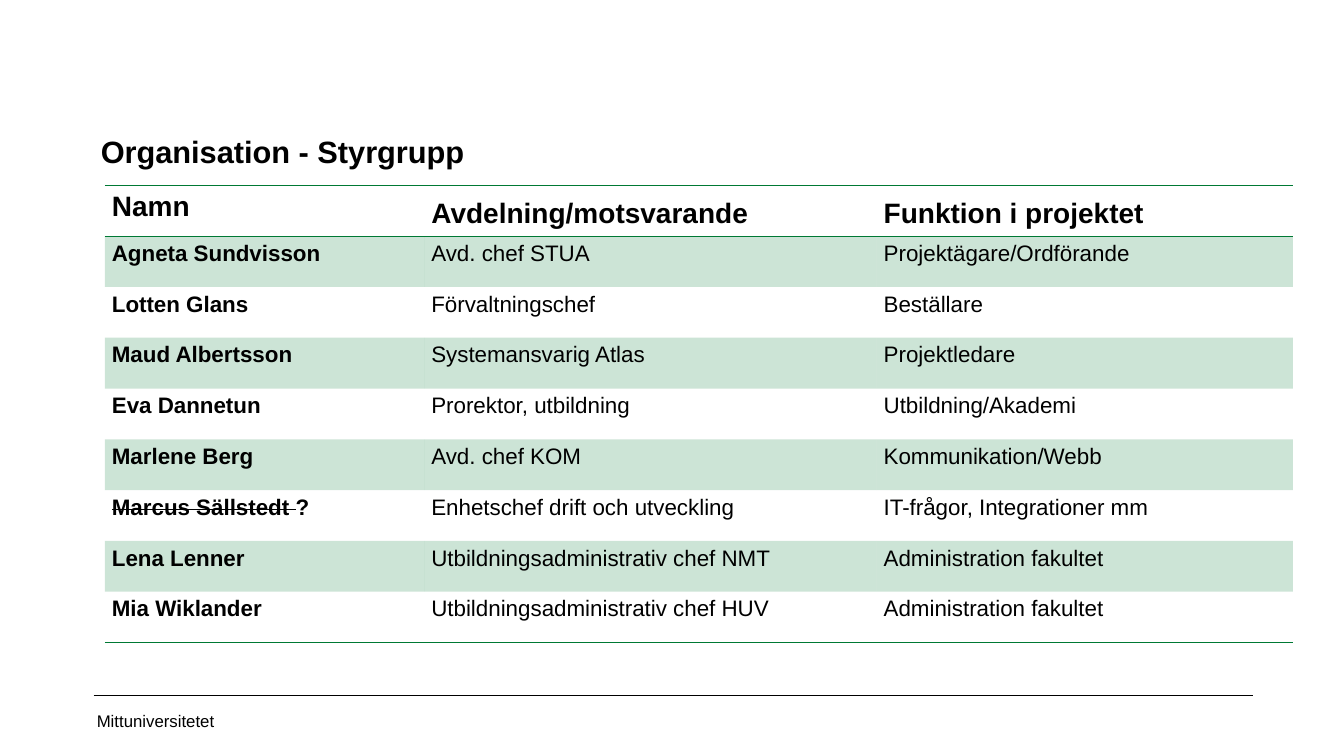
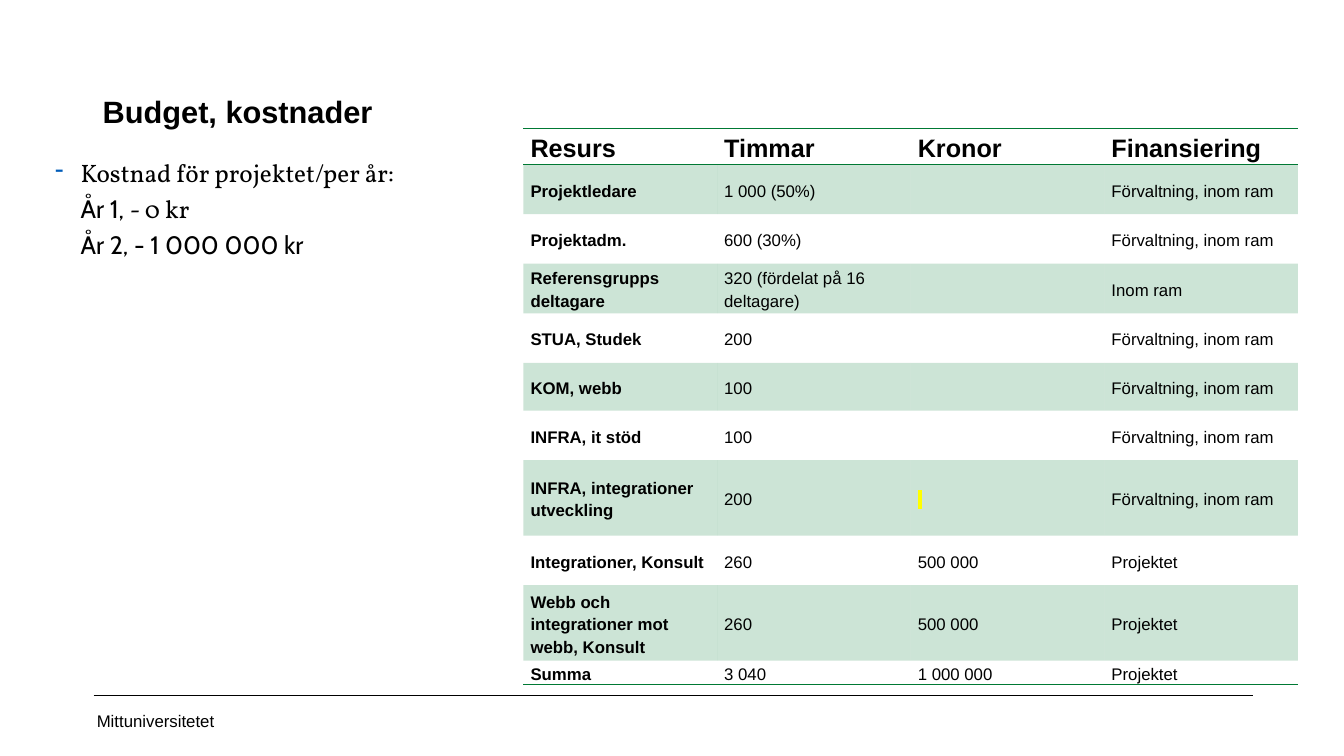
from lxml.etree import SubElement as Sub
from pptx import Presentation
from pptx.dml.color import RGBColor as Rgb
from pptx.enum.shapes import MSO_CONNECTOR as Link
from pptx.enum.text import MSO_ANCHOR as Anchor
from pptx.oxml.ns import qn
from pptx.util import Cm, Pt

INK = {"text": "000000", "green": "007934", "dash": "005CB9", "mark": "FFFF00"}
PLAIN = "{2D5ABB26-0587-4C30-8999-92F81FD0307C}"
TITLE = {"size": Pt(22), "bold": True, "name": "Arial"}
FOOT = {"size": Pt(12), "name": "Arial"}
FRAME = {"word_wrap": True, "vertical_anchor": Anchor.TOP}
MARGIN = {"margin_left": Cm(0.18), "margin_right": Cm(0.18),
          "margin_top": 0, "margin_bottom": 0}

STAFF = [
    ("Namn", "Avdelning/motsvarande", "Funktion i projektet"),
    ("Agneta Sundvisson", "Avd. chef STUA", "Projektägare/Ordförande"),
    ("Lotten Glans", "Förvaltningschef", "Beställare"),
    ("Maud Albertsson", "Systemansvarig Atlas", "Projektledare"),
    ("Eva Dannetun", "Prorektor, utbildning", "Utbildning/Akademi"),
    ("Marlene Berg", "Avd. chef KOM", "Kommunikation/Webb"),
    ("Marcus Sällstedt ", "Enhetschef drift och utveckling", "IT-frågor, Integrationer mm"),
    ("Lena Lenner", "Utbildningsadministrativ chef NMT", "Administration fakultet"),
    ("Mia Wiklander", "Utbildningsadministrativ chef HUV", "Administration fakultet"),
]
WITHIN = "Förvaltning, inom ram"
COSTS = [
    ("Resurs", "Timmar", "Kronor", "Finansiering"),
    ("Projektledare", "1 000 (50%)", "", WITHIN),
    ("Projektadm.", "600 (30%)", "", WITHIN),
    ("Referensgrupps deltagare", "320 (fördelat på 16 deltagare)", "", "Inom ram"),
    ("STUA, Studek", "200", "", WITHIN),
    ("KOM, webb", "100", "", WITHIN),
    ("INFRA, it stöd", "100", "", WITHIN),
    ("INFRA, integrationer utveckling", "200", " ", WITHIN),
    ("Integrationer, Konsult", "260", "500 000", "Projektet"),
    ("Webb och integrationer mot webb, Konsult", "260", "500 000", "Projektet"),
    ("Summa", "3 040", "1 000 000", "Projektet"),
]
YEARS = [
    [("Kostnad för projektet/per år:", "Vollkorn")],
    [("År 1, ", "Cabin"), ("- 0 kr", "Vollkorn")],
    [("År 2, - 1 000 000 kr", "Cabin")],
]


def apply(item, style):
    """Set each attribute named in a style."""
    for key, value in style.items():
        setattr(item, key, value)


def write(para, text, style):
    """Add a run in the text colour."""
    run = para.add_run()
    run.text = text
    apply(run.font, style)
    run.font.color.rgb = Rgb.from_string(INK["text"])
    return run


def mark(run):
    """Highlight a run."""
    fill = run._r.get_or_add_rPr().find(qn("a:solidFill"))
    light = Sub(fill.getparent(), qn("a:highlight"))
    Sub(light, qn("a:srgbClr"), val=INK["mark"])
    fill.addnext(light)


def frame(slide, box, **style):
    """Add a wrapped text box and return its text frame."""
    body = slide.shapes.add_textbox(*map(Cm, box)).text_frame
    apply(body, {**FRAME, **style})
    return body


def title(slide, box, text):
    """Write the slide title."""
    para = frame(slide, box).paragraphs[0]
    para.line_spacing = Pt(36)
    write(para, text, TITLE)


def footer(slide, box):
    """Draw the rule and the sender below it."""
    left, top, width, height = box
    rule = slide.shapes.add_connector(
        Link.STRAIGHT, Cm(left), Cm(top), Cm(left + width), Cm(top))
    rule.line.width = Pt(0.25)
    rule.line.color.rgb = Rgb.from_string(INK["text"])
    Sub(rule._element.spPr, qn("a:effectLst"))
    body = frame(slide, (left - 0.02, top + 0.13, 7.62, height),
                 vertical_anchor=Anchor.MIDDLE, margin_left=Cm(0.1))
    write(body.paragraphs[0], "Mittuniversitetet", FOOT)


def border(cell, sides):
    """Draw green lines on the given sides of a cell."""
    props = cell._tc.get_or_add_tcPr()
    for spot, side in enumerate(sides):
        line = Sub(props, qn(f"a:ln{side}"), w=str(Pt(1)))
        Sub(Sub(line, qn("a:solidFill")), qn("a:srgbClr"), val=INK["green"])
        props.insert(spot, line)


def shade(cell, tint):
    """Give a cell a pale green fill or none."""
    if not tint:
        cell.fill.background()
        return
    cell.fill.solid()
    cell.fill.fore_color.rgb = Rgb.from_string(INK["green"])
    color = cell._tc.tcPr.find(".//" + qn("a:srgbClr"))
    Sub(color, qn("a:alpha"), val="20000")


def fill(cell, text, style, anchor):
    """Write the text of a cell."""
    apply(cell, {**MARGIN, "vertical_anchor": anchor})
    para = cell.text_frame.paragraphs[0]
    para.line_spacing = 1.2
    return write(para, text, style) if text else None


def grid(slide, spot, cols, rows, data, sizes, anchor):
    """Build a banded table and return its runs by row and column."""
    shape = slide.shapes.add_table(
        len(rows), len(cols), *map(Cm, (*spot, sum(cols), sum(rows))))
    table = shape.table
    table._tbl.tblPr.find(qn("a:tableStyleId")).text = PLAIN
    apply(table, {"first_row": False, "horz_banding": False})
    for col, width in zip(table.columns, cols):
        col.width = Cm(width)
    runs, last = {}, len(rows) - 1
    for i, line in enumerate(data):
        table.rows[i].height = Cm(rows[i])
        for j, text in enumerate(line):
            cell = table.cell(i, j)
            head = i == 0
            style = {"size": Pt(sizes[not head]), "name": "Arial", "bold": head or j == 0}
            place = Anchor.MIDDLE if head and j else anchor
            runs[i, j] = fill(cell, text, style, place)
            shade(cell, i % 2)
            border(cell, "TB" if head else "B" if i == last else "")
    return runs


def notes(slide, box):
    """Write the yearly costs as one dashed item."""
    para = frame(slide, box).paragraphs[0]
    para.line_spacing = 1.2
    props = para._p.get_or_add_pPr()
    apply_indent = {"marL": Cm(0.64), "indent": -Cm(0.64)}
    for key, value in apply_indent.items():
        props.set(key, str(value))
    Sub(Sub(props, qn("a:buClr")), qn("a:srgbClr"), val=INK["dash"])
    Sub(props, qn("a:buChar"), char="-")
    for i, line in enumerate(YEARS):
        if i:
            para.add_line_break()
        for text, name in line:
            write(para, text, {"size": Pt(18), "name": name})


def board(slide):
    """Compose the steering group slide."""
    title(slide, (2.29, 2.87, 29.3, 1.8), "Organisation - Styrgrupp")
    runs = grid(slide, (2.64, 4.67), (8.05, 11.4, 10.49), [1.28] * len(STAFF),
                STAFF, (20, 16), Anchor.TOP)
    name = runs[6, 0]
    name._r.get_or_add_rPr().set("strike", "sngStrike")
    para = name._r.getparent()
    query = write(slide.shapes[-1].table.cell(6, 0).text_frame.paragraphs[0], "?",
                  {"size": Pt(16), "name": "Arial", "bold": True})
    para.append(query._r)


def budget(slide):
    """Compose the budget slide."""
    title(slide, (2.34, 1.88, 29.3, 1.8), "Budget, kostnader")
    notes(slide, (1.14, 3.68, 10.92, 10.67))
    rows = [0.86] + [1.25] * 4 + [1.2, 1.25, 1.9, 1.25, 1.9, 0.61]
    runs = grid(slide, (13.19, 3.23), [4.88] * 4, rows, COSTS, (18, 12), Anchor.MIDDLE)
    mark(runs[7, 2])


def main():
    """Build and save the deck."""
    deck = Presentation()
    apply(deck, {"slide_width": Cm(33.87), "slide_height": Cm(19.05)})
    for build in (board, budget):
        slide = deck.slides.add_slide(deck.slide_layouts[6])
        footer(slide, (2.36, 17.53, 29.21, 1.02))
        build(slide)
    deck.save("out.pptx")


if __name__ == "__main__":
    main()
